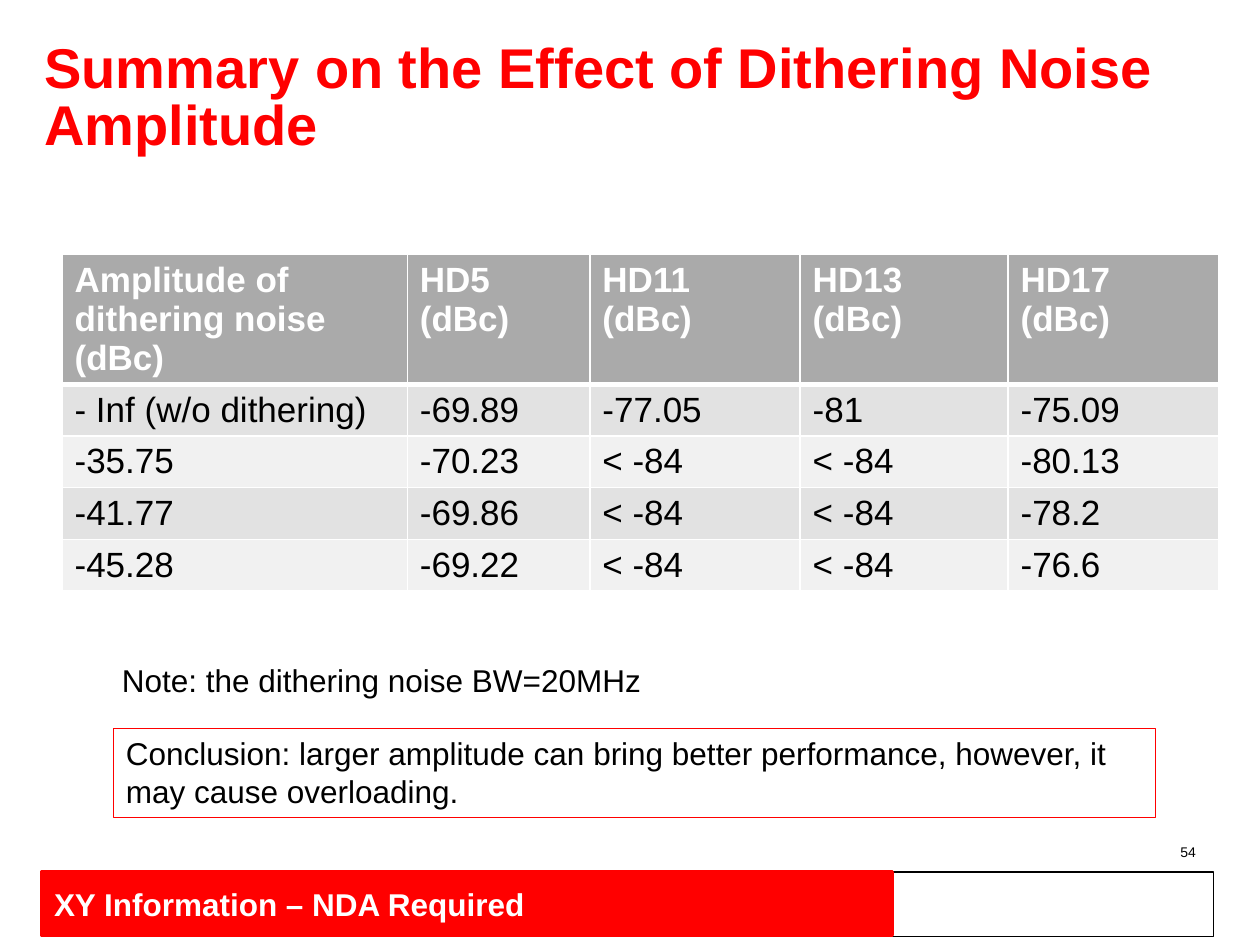
from lxml import etree
from pptx import Presentation
from pptx.dml.color import RGBColor
from pptx.enum import shapes, text
from pptx.oxml import ns
from pptx.util import Cm, Pt

TITLE = "Summary on the Effect of Dithering Noise Amplitude"
ROWS = [
    ("Amplitude of dithering noise (dBc)", "HD5 (dBc)", "HD11 (dBc)", "HD13 (dBc)", "HD17 (dBc)"),
    ("- Inf (w/o dithering)", "-69.89", "-77.05", "-81", "-75.09"),
    ("-35.75", "-70.23", "< -84", "< -84", "-80.13"),
    ("-41.77", "-69.86", "< -84", "< -84", "-78.2"),
    ("-45.28", "-69.22", "< -84", "< -84", "-76.6"),
]
COL_WIDTHS = [6.96, 3.68, 4.24, 4.19, 4.24]
HEADER_HEIGHT, ROW_HEIGHT = 2.6, 1.04
HEADER_FILL, BAND_FILLS = "AAAAAA", ("F1F1F1", "E2E2E2")
NOTE = "Note: the dithering noise BW=20MHz"
CONCLUSION = ("Conclusion: larger amplitude can bring better performance, "
              "however, it may cause overloading.")
PAGE = "54"
FOOTER = "XY Information – NDA Required"
RED, BLACK, WHITE = "FF0000", "000000", "FFFFFF"


def rgb(value):
    return RGBColor.from_string(value)


def write(tf, content, size, color=BLACK, bold=False, align=text.PP_ALIGN.LEFT,
          anchor=text.MSO_ANCHOR.TOP, wrap=True):
    for name, value in {"word_wrap": wrap, "vertical_anchor": anchor}.items():
        setattr(tf, name, value)
    p = tf.paragraphs[0]
    p.alignment = align
    r = p.add_run()
    r.text = content
    for name, value in {"name": "Arial", "size": Pt(size), "bold": bold}.items():
        setattr(r.font, name, value)
    r.font.color.rgb = rgb(color)
    return p


def add_box(s, box, line, width=0.75, fill=None):
    sp = s.shapes.add_shape(shapes.MSO_SHAPE.RECTANGLE, *map(Cm, box))
    sp.shadow.inherit = False
    if fill:
        sp.fill.solid()
        sp.fill.fore_color.rgb = rgb(fill)
    else:
        sp.fill.background()
    sp.line.color.rgb = rgb(line)
    sp.line.width = Pt(width)
    return sp


def add_label(s, box, content, size, **options):
    write(s.shapes.add_textbox(*map(Cm, box)).text_frame, content, size, **options)


def set_borders(cell, widths):
    tc_pr = cell._tc.get_or_add_tcPr()
    for side, width in widths.items():
        ln = etree.SubElement(tc_pr, ns.qn(f"a:ln{side}"), w=str(Pt(width)))
        fill = etree.SubElement(ln, ns.qn("a:solidFill"))
        etree.SubElement(fill, ns.qn("a:srgbClr"), val=WHITE)


def add_results(s):
    heights = [HEADER_HEIGHT] + [ROW_HEIGHT] * (len(ROWS) - 1)
    table = s.shapes.add_table(len(ROWS), len(COL_WIDTHS), Cm(1.25), Cm(5.13),
                               Cm(sum(COL_WIDTHS)), Cm(sum(heights))).table
    for column, width in zip(table.columns, COL_WIDTHS):
        column.width = Cm(width)
    for i, (row, height) in enumerate(zip(ROWS, heights)):
        header = i == 0
        table.rows[i].height = Cm(height)
        for j, value in enumerate(row):
            cell = table.cell(i, j)
            set_borders(cell, {"L": 1, "R": 1, "T": 3 if i == 1 else 1, "B": 3 if header else 1})
            cell.fill.solid()
            cell.fill.fore_color.rgb = rgb(HEADER_FILL if header else BAND_FILLS[i % 2])
            write(cell.text_frame, value, 20, WHITE if header else BLACK, header)


def main():
    prs = Presentation()
    prs.slide_width, prs.slide_height = Cm(25.4), Cm(19.05)
    s = prs.slides.add_slide(prs.slide_layouts[5])
    middle = text.MSO_ANCHOR.MIDDLE

    add_box(s, (0.94, 17.58, 23.52, 1.3), BLACK)

    title = s.shapes.title
    for name, value in zip(("left", "top", "width", "height"), (0.64, 0.89, 23.5, 2.26)):
        setattr(title, name, Cm(value))
    title.text_frame.auto_size = text.MSO_AUTO_SIZE.NONE
    write(title.text_frame, TITLE, 32, RED, True, anchor=middle).line_spacing = 0.85

    add_results(s)
    add_label(s, (2.21, 13.21, 11.07, 1.02), NOTE, 18, wrap=False)
    conclusion = add_box(s, (2.29, 14.68, 21, 1.8), RED)
    write(conclusion.text_frame, CONCLUSION, 18)
    add_label(s, (18.44, 16.89, 5.92, 0.58), PAGE, 8, align=text.PP_ALIGN.RIGHT)
    footer = add_box(s, (0.84, 17.58, 17.15, 1.27), RED, 2, RED)
    write(footer.text_frame, FOOTER, 18, WHITE, True, anchor=middle)

    prs.save("out.pptx")


if __name__ == "__main__":
    main()
